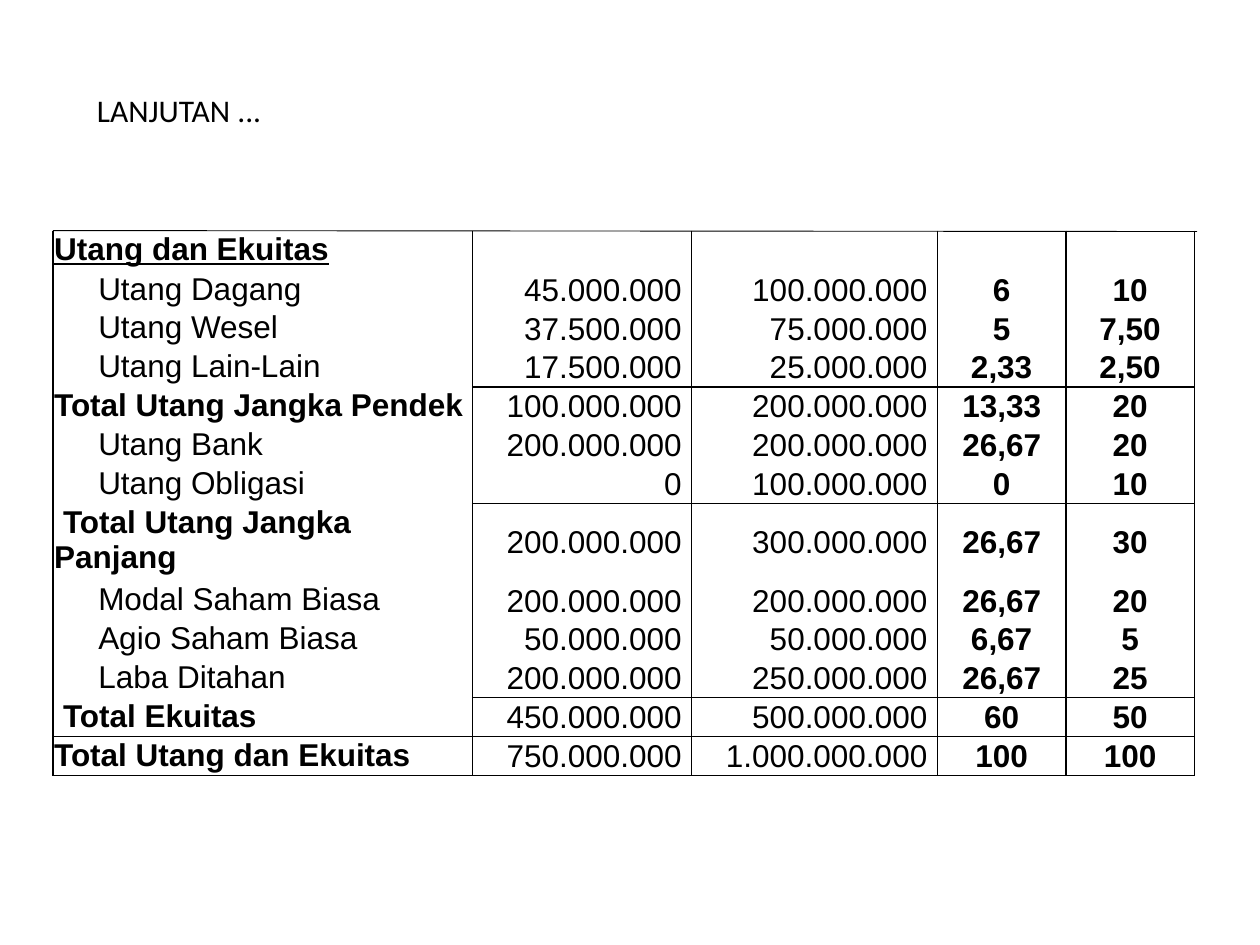
"""Build the liabilities and equity slide with its common-size table."""
from dataclasses import dataclass

import pptx
import pptx.dml.color
import pptx.enum.shapes
import pptx.enum.text
import pptx.oxml
import pptx.oxml.ns
import pptx.util

Align = pptx.enum.text.PP_ALIGN


@dataclass(frozen=True)
class Theme:
    """Colours, fonts and sizes in points."""
    ink: str = "000000"
    title_font: str = "Calibri"
    table_font: str = "Arial"
    text_size: float = 18
    border: float = 1
    rule: float = 0.5


@dataclass(frozen=True)
class Entry:
    """One table row: label, its values and how it is set."""
    label: str
    values: tuple[str, ...] = ("", "", "", "")
    indent: float = 0.35
    bold: bool = False
    underline: bool = False
    ruled: bool = False
    units: int = 1


@dataclass(frozen=True)
class Column:
    """One table column, with its width as a share of the slide."""
    share: float
    align: Align
    bold: bool = False


def total(label: str, *values: str, indent: float = 0, units: int = 1) -> Entry:
    """Describe a bold, ruled total row."""
    return Entry(label, values, indent, bold=True, ruled=True, units=units)


THEME = Theme()
WIDTH, HEIGHT = pptx.util.Inches(10), pptx.util.Inches(7.5)
LEFT, TOP = 0.042, 0.244
TABLE_HEIGHT = 0.576
MARGIN = pptx.util.Inches(0.01)
VALUE_MARGIN = pptx.util.Inches(0.08)
COLUMNS = (
    Column(0.333, Align.LEFT),
    Column(0.174, Align.RIGHT),
    Column(0.195, Align.RIGHT),
    Column(0.102, Align.CENTER, True),
    Column(0.102, Align.CENTER, True),
)
ENTRIES = (
    Entry("Utang dan Ekuitas", indent=0, bold=True, underline=True),
    Entry("Utang Dagang", ("45.000.000", "100.000.000", "6", "10")),
    Entry("Utang Wesel", ("37.500.000", "75.000.000", "5", "7,50")),
    Entry("Utang Lain-Lain", ("17.500.000", "25.000.000", "2,33", "2,50")),
    total("Total Utang Jangka Pendek", "100.000.000", "200.000.000", "13,33", "20"),
    Entry("Utang Bank", ("200.000.000", "200.000.000", "26,67", "20")),
    Entry("Utang Obligasi", ("0", "100.000.000", "0", "10")),
    total("Total Utang Jangka Panjang", "200.000.000", "300.000.000", "26,67", "30",
          indent=0.07, units=2),
    Entry("Modal Saham Biasa", ("200.000.000", "200.000.000", "26,67", "20")),
    Entry("Agio Saham Biasa", ("50.000.000", "50.000.000", "6,67", "5")),
    Entry("Laba Ditahan", ("200.000.000", "250.000.000", "26,67", "25")),
    total("Total Ekuitas", "450.000.000", "500.000.000", "60", "50", indent=0.07),
    total("Total Utang dan Ekuitas", "750.000.000", "1.000.000.000", "100", "100"),
)


def across(share: float) -> int:
    """Turn a share of the slide width into a length."""
    return round(WIDTH * share)


def down(share: float) -> int:
    """Turn a share of the slide height into a length."""
    return round(HEIGHT * share)


def style_font(font, name: str, bold: bool = False, underline: bool = False) -> None:
    """Apply the theme's size and colour with the given face."""
    font.name = name
    font.size = pptx.util.Pt(THEME.text_size)
    font.bold = bold
    font.underline = underline
    font.color.rgb = pptx.dml.color.RGBColor.from_string(THEME.ink)


def set_borders(cell, top: bool, bottom: bool) -> None:
    """Draw both side borders and the chosen horizontal ones."""
    properties = cell._tc.get_or_add_tcPr()
    sides = {"lnL": True, "lnR": True, "lnT": top, "lnB": bottom}
    for side, visible in sides.items():
        fill = (f'<a:solidFill><a:srgbClr val="{THEME.ink}"/></a:solidFill>'
                if visible else "<a:noFill/>")
        properties.append(pptx.oxml.parse_xml(
            f'<a:{side} {pptx.oxml.ns.nsdecls("a")} '
            f'w="{pptx.util.Pt(THEME.border)}">{fill}</a:{side}>'))


def is_ruled(row: int, column: int) -> bool:
    """Tell whether a cell is boxed above and below."""
    return (row < len(ENTRIES) and ENTRIES[row].ruled
            and (column > 0 or row == len(ENTRIES) - 1))


def fill_cell(cell, row: int, index: int) -> None:
    """Write and format one cell of the table."""
    entry, column = ENTRIES[row], COLUMNS[index]
    is_label = index == 0
    set_borders(cell, is_ruled(row, index), is_ruled(row, index) or is_ruled(row + 1, index))
    cell.fill.background()
    cell.margin_left = cell.margin_top = MARGIN
    cell.margin_right = VALUE_MARGIN if column.align == Align.RIGHT else MARGIN
    cell.margin_bottom = 0
    anchor = pptx.enum.text.MSO_ANCHOR
    cell.vertical_anchor = anchor.TOP if is_label else anchor.MIDDLE
    cell.text_frame.text = entry.label if is_label else entry.values[index - 1]
    paragraph = cell.text_frame.paragraphs[0]
    paragraph.alignment = column.align
    if is_label:
        paragraph._p.get_or_add_pPr().set("indent", str(pptx.util.Inches(entry.indent)))
    bold = entry.bold if is_label else column.bold
    for run in paragraph.runs:
        style_font(run.font, THEME.table_font, bold, is_label and entry.underline)


def add_balance_table(slide) -> None:
    """Add the table of liabilities and equity."""
    width = sum(column.share for column in COLUMNS)
    table = slide.shapes.add_table(
        len(ENTRIES), len(COLUMNS), across(LEFT), down(TOP),
        across(width), down(TABLE_HEIGHT)).table
    table.first_row = table.horz_banding = False
    unit = TABLE_HEIGHT / sum(entry.units for entry in ENTRIES)
    for index, column in enumerate(COLUMNS):
        table.columns[index].width = across(column.share)
    for row, entry in enumerate(ENTRIES):
        table.rows[row].height = down(unit * entry.units)
        for index in range(len(COLUMNS)):
            fill_cell(table.cell(row, index), row, index)


def add_top_rule(slide) -> None:
    """Add the thin line along the top of the table."""
    line = slide.shapes.add_connector(
        pptx.enum.shapes.MSO_CONNECTOR.STRAIGHT,
        across(LEFT), down(TOP), across(0.95), down(TOP + 0.001))
    line.line.width = pptx.util.Pt(THEME.rule)
    line.line.color.rgb = pptx.dml.color.RGBColor.from_string(THEME.ink)
    line._element.spPr.append(pptx.oxml.parse_xml(
        f'<a:effectLst {pptx.oxml.ns.nsdecls("a")}/>'))


def add_heading(slide) -> None:
    """Add the slide heading."""
    box = slide.shapes.add_textbox(across(0.067), down(0.09), across(0.358), down(0.054))
    frame = box.text_frame
    frame.word_wrap = True
    frame.text = "LANJUTAN ..."
    style_font(frame.paragraphs[0].runs[0].font, THEME.title_font)


def main() -> None:
    """Build and save the presentation."""
    presentation = pptx.Presentation()
    presentation.slide_width, presentation.slide_height = WIDTH, HEIGHT
    slide = presentation.slides.add_slide(presentation.slide_layouts[6])
    add_balance_table(slide)
    add_top_rule(slide)
    add_heading(slide)
    presentation.save("out.pptx")


if __name__ == "__main__":
    main()
